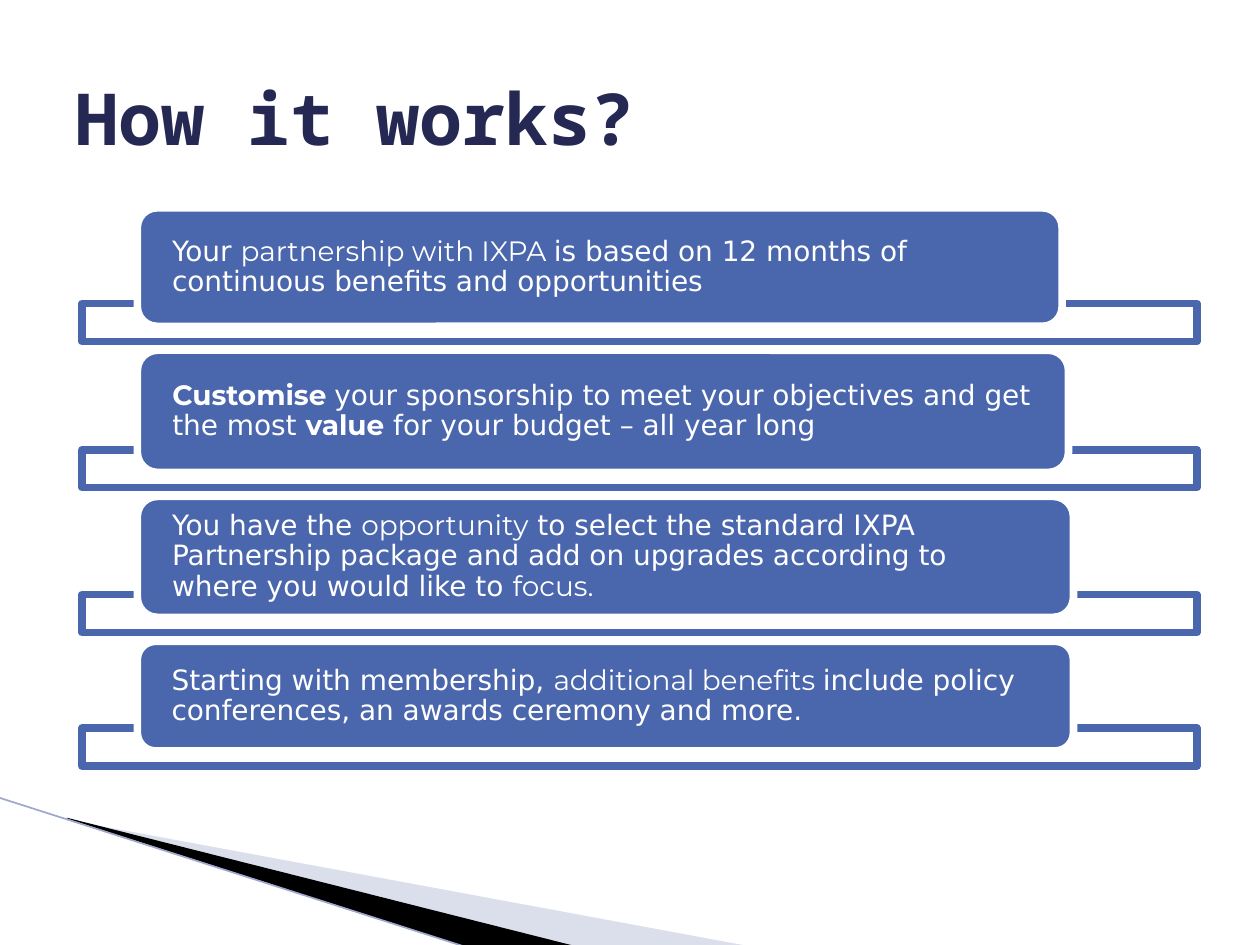
import pptx
import pptx.dml.color
import pptx.enum.shapes
import pptx.enum.text
import pptx.oxml
import pptx.oxml.ns
import pptx.util
from dataclasses import dataclass

PX = 9144  # EMU in one px, 100 px to the inch


@dataclass(frozen=True)
class Theme:
    white: str = "FFFFFF"
    black: str = "000000"
    navy: str = "242852"
    blue: str = "4A66AC"
    pale: str = "A6AFD1"
    edge: str = "9EA7CC"
    title_font: str = "Noto Sans Mono"
    body_font: str = "DejaVu Sans"
    accent_font: str = "Montserrat"
    title_size: int = 41
    body_size: int = 16
    outline: float = 4.33
    thin: float = 0.95


THEME = Theme()

# Each step: card top, width, height, frame top, and runs of (text, style)
STEPS = [
    (165, 734, 94, 241, [
        ("Your ", "body"), ("partnership with IXPA ", "accent"),
        ("is based on 12 months of continuous benefits and opportunities", "body")]),
    (278, 739, 97, 357, [
        ("Customise ", "strong"),
        ("your sponsorship to meet your objectives and get the most ", "body"),
        ("value", "strong"), (" for your budget – all year long", "body")]),
    (394, 743, 96, 472, [
        ("You have the ", "body"), ("opportunity", "accent"),
        (" to select the standard IXPA Partnership package and add on upgrades "
         "according to where you would like to ", "body"), ("focus.", "accent")]),
    (509, 743, 87, 578, [
        ("Starting with membership, ", "body"), ("additional benefits ", "accent"),
        ("include policy conferences, an awards ceremony and more.", "body")]),
]
CARD_LEFT, CARD_INSET = 109, 23
FRAME_LEFT, FRAME_WIDTH, FRAME_HEIGHT = 65, 885, 30

STYLES = {
    "title": dict(name=THEME.title_font, size=THEME.title_size, bold=True, color=THEME.navy),
    "body": dict(name=THEME.body_font, size=THEME.body_size, bold=False, color=THEME.white),
    "accent": dict(name=THEME.accent_font, size=THEME.body_size, bold=False, color=THEME.white),
    "strong": dict(name=THEME.accent_font, size=THEME.body_size, bold=True, color=THEME.white),
}


def px(*lengths):
    return [pptx.util.Emu(length * PX) for length in lengths]


def rgb(value):
    return pptx.dml.color.RGBColor.from_string(value)


def set_format(target, values):
    for name, value in values.items():
        setattr(target, name, value)


def paint(shape, fill, opacity=100, line=None):
    shape.shadow.inherit = False
    shape.fill.solid()
    shape.fill.fore_color.rgb = rgb(fill)
    if opacity < 100:
        color = shape.fill._xPr.find(".//" + pptx.oxml.ns.qn("a:srgbClr"))
        alpha = pptx.oxml.parse_xml(
            f'<a:alpha {pptx.oxml.ns.nsdecls("a")} val="{opacity * 1000}"/>')
        color.append(alpha)
    if line is None:
        shape.line.fill.background()
    else:
        shape.line.color.rgb = rgb(line)
        shape.line.width = pptx.util.Pt(THEME.outline)


def write(shape, runs, side_inset, end_inset, line_spacing):
    frame = shape.text_frame
    side, end = px(side_inset, end_inset)
    set_format(frame, dict(
        word_wrap=True, vertical_anchor=pptx.enum.text.MSO_ANCHOR.MIDDLE,
        margin_left=side, margin_right=side, margin_top=end, margin_bottom=end))
    paragraph = frame.paragraphs[0]
    set_format(paragraph, dict(
        alignment=pptx.enum.text.PP_ALIGN.LEFT, line_spacing=line_spacing))
    for text, style in runs:
        run = paragraph.add_run()
        run.text = text
        values = dict(STYLES[style])
        run.font.color.rgb = rgb(values.pop("color"))
        values["size"] = pptx.util.Pt(values["size"])
        set_format(run.font, values)


def add_wedge(slide, points, fill, opacity=100):
    builder = slide.shapes.build_freeform(*points[0], scale=PX)
    builder.add_line_segments(points[1:], close=True)
    paint(builder.convert_to_shape(), fill, opacity)


def add_edge(slide, start, end):
    connector = slide.shapes.add_connector(
        pptx.enum.shapes.MSO_CONNECTOR.STRAIGHT, *px(*start, *end))
    connector.line.color.rgb = rgb(THEME.edge)
    connector.line.width = pptx.util.Pt(THEME.thin)
    connector._element.spPr.append(
        pptx.oxml.parse_xml(f'<a:effectLst {pptx.oxml.ns.nsdecls("a")}/>'))


def add_title(slide, text):
    box = slide.shapes.add_textbox(*px(50, 30, 900, 125))
    write(box, [(text, "title")], 10, 5, 1.0)


def add_step(slide, top, width, height, frame_top, runs):
    kinds = pptx.enum.shapes.MSO_SHAPE
    frame = slide.shapes.add_shape(
        kinds.RECTANGLE, *px(FRAME_LEFT, frame_top, FRAME_WIDTH, FRAME_HEIGHT))
    paint(frame, THEME.white, 90, THEME.blue)
    card = slide.shapes.add_shape(
        kinds.ROUNDED_RECTANGLE, *px(CARD_LEFT, top, width, height))
    paint(card, THEME.blue, line=THEME.white)
    write(card, runs, CARD_INSET, 0, 0.9)


def main():
    presentation = pptx.Presentation()
    presentation.slide_width, presentation.slide_height = px(1000, 750)
    slide = presentation.slides.add_slide(presentation.slide_layouts[6])

    # Corner decoration
    add_wedge(slide, [(55, 651), (595, 751), (456, 751), (55, 650)], THEME.pale, 40)
    add_wedge(slide, [(53, 649), (457, 751), (372, 752), (54, 650)], THEME.black)
    add_edge(slide, (-1, 633), (371, 752))

    # Heading and steps
    add_title(slide, "How it works?")
    for step in STEPS:
        add_step(slide, *step)

    presentation.save("out.pptx")


if __name__ == "__main__":
    main()
